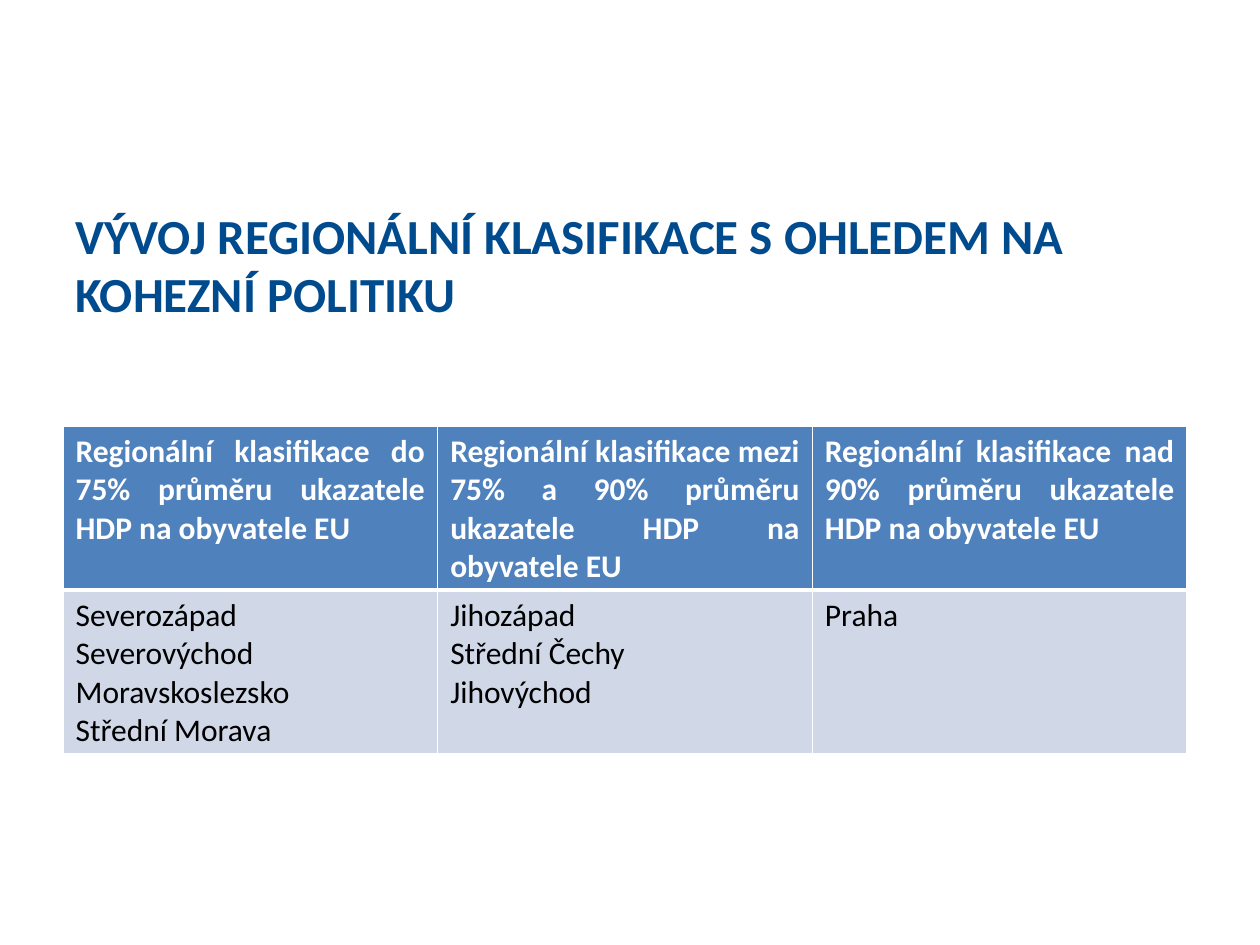
import pptx
import pptx.dml.color
import pptx.enum.text
import pptx.oxml
import pptx.util
from pptx.oxml.ns import nsdecls
from pptx.util import Cm

FONT = "Calibri"
COLOURS = {
    "title": "004B8E",
    "header": "4F81BD",
    "body": "D0D8E8",
    "light": "FFFFFF",
    "dark": "000000",
}
TITLE = "VÝVOJ REGIONÁLNÍ KLASIFIKACE S OHLEDEM NA KOHEZNÍ POLITIKU"
# Each class of regions with the regions that belong to it
CLASSES = [
    ("Regionální klasifikace do 75% průměru ukazatele HDP na obyvatele EU",
     ["Severozápad", "Severovýchod", "Moravskoslezsko", "Střední Morava"]),
    ("Regionální klasifikace mezi 75% a 90% průměru ukazatele HDP na obyvatele EU",
     ["Jihozápad", "Střední Čechy", "Jihovýchod"]),
    ("Regionální klasifikace nad 90% průměru ukazatele HDP na obyvatele EU",
     ["Praha"]),
]
THIN, THICK = 1, 3


def rgb(name):
    return pptx.dml.color.RGBColor.from_string(COLOURS[name])


def write(frame, lines, size, colour, bold, align):
    frame.text = "\n".join(lines)
    for paragraph in frame.paragraphs:
        paragraph.alignment = align
        paragraph.font.name = FONT
        paragraph.font.size = pptx.util.Pt(size)
        paragraph.font.bold = bold
        paragraph.font.color.rgb = rgb(colour)


def set_borders(cell, top, bottom):
    properties = cell._tc.get_or_add_tcPr()
    for side, points in (("L", THIN), ("R", THIN), ("T", top), ("B", bottom)):
        properties.append(pptx.oxml.parse_xml(
            f'<a:ln{side} {nsdecls("a")} w="{pptx.util.Pt(points)}"><a:solidFill>'
            f'<a:srgbClr val="{COLOURS["light"]}"/></a:solidFill></a:ln{side}>'))


def fill_cell(cell, lines, fill, colour, bold, align, top, bottom):
    set_borders(cell, top, bottom)
    cell.fill.solid()
    cell.fill.fore_color.rgb = rgb(fill)
    write(cell.text_frame, lines, 18, colour, bold, align)


def add_title(slide):
    frame = slide.shapes.add_textbox(Cm(1.27), Cm(4.01), Cm(22.86), Cm(1.5)).text_frame
    frame.word_wrap = True
    write(frame, [TITLE], 28, "title", True, pptx.enum.text.PP_ALIGN.LEFT)


def add_region_table(slide):
    table = slide.shapes.add_table(
        2, len(CLASSES), Cm(1.27), Cm(8.59), Cm(22.66), Cm(6.6)).table
    align = pptx.enum.text.PP_ALIGN
    for column, (heading, regions) in enumerate(CLASSES):
        fill_cell(table.cell(0, column), [heading], "header", "light", True,
                  align.JUSTIFY, THIN, THICK)
        fill_cell(table.cell(1, column), regions, "body", "dark", False,
                  align.LEFT, THICK, THIN)


def main():
    presentation = pptx.Presentation()
    presentation.slide_width = Cm(25.4)
    presentation.slide_height = Cm(19.05)
    slide = presentation.slides.add_slide(presentation.slide_layouts[6])
    add_title(slide)
    add_region_table(slide)
    presentation.save("out.pptx")


if __name__ == "__main__":
    main()
